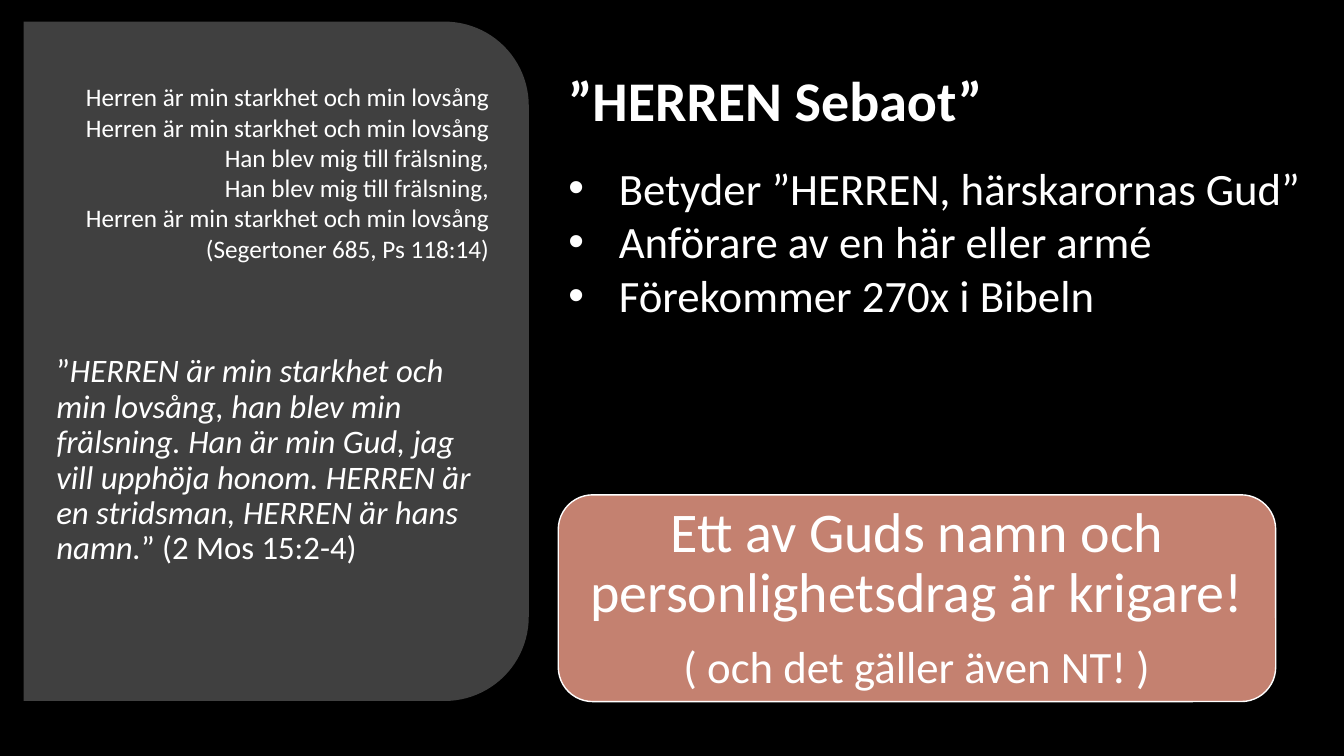
from lxml.etree import SubElement
from pptx import Presentation
from pptx.dml.color import RGBColor
from pptx.enum.shapes import MSO_SHAPE
from pptx.enum.text import MSO_ANCHOR, MSO_AUTO_SIZE, PP_ALIGN
from pptx.oxml.ns import qn
from pptx.util import Cm, Pt


def color(value):
    return RGBColor.from_string(value)


def add_text(paragraph, text, size, bold=False, italic=False):
    run = paragraph.add_run()
    run.text = text
    run.font.name = "Calibri"
    run.font.size = Pt(size)
    run.font.bold = bold
    run.font.italic = italic
    run.font.color.rgb = color("FFFFFF")


presentation = Presentation()
presentation.slide_width = Cm(33.87)
presentation.slide_height = Cm(19.05)
slide = presentation.slides.add_slide(presentation.slide_layouts[1])
slide.background.fill.solid()
slide.background.fill.fore_color.rgb = color("000000")
shapes = slide.shapes

panel = shapes.add_shape(MSO_SHAPE.ROUND_2_SAME_RECTANGLE, Cm(-1.6), Cm(2.74), Cm(17.12), Cm(12.73))
panel.rotation = 90
panel.shadow.inherit = False
panel.fill.solid()
panel.fill.fore_color.rgb = color("404040")
panel.line.fill.background()
title = shapes.title
title.element.addprevious(panel.element)

song_lines = [
    "Herren är min starkhet och min lovsång",
    "Herren är min starkhet och min lovsång",
    "Han blev mig till frälsning,",
    "Han blev mig till frälsning,",
    "Herren är min starkhet och min lovsång",
    "(Segertoner 685, Ps 118:14)",
]
title.left, title.top, title.width, title.height = Cm(0.97), Cm(2.16), Cm(11.61), Cm(5.13)
title.text_frame.auto_size = MSO_AUTO_SIZE.NONE
title.text_frame.vertical_anchor = MSO_ANCHOR.MIDDLE
title.text_frame.margin_bottom = Cm(0.89)
paragraph = title.text_frame.paragraphs[0]
paragraph.alignment = PP_ALIGN.RIGHT
for index, line in enumerate(song_lines):
    if index:
        paragraph.add_line_break()
    add_text(paragraph, line, 18)

quote = shapes.add_textbox(Cm(1.17), Cm(6.86), Cm(11.61), Cm(9.5))
quote.text_frame.word_wrap = True
quote.text_frame.vertical_anchor = MSO_ANCHOR.MIDDLE
paragraph = quote.text_frame.paragraphs[0]
paragraph.line_spacing = 0.9
add_text(paragraph, "”", 23.4)
add_text(
    paragraph,
    "HERREN är min starkhet och min lovsång, han blev min frälsning. Han är min Gud, "
    "jag vill upphöja honom. HERREN är en stridsman, HERREN är hans namn.",
    23.4,
    italic=True,
)
add_text(paragraph, "” (2 Mos 15:2-4)", 23.4)

facts = slide.placeholders[1]
facts.left, facts.top, facts.width, facts.height = Cm(14.07), Cm(3.91), Cm(19.08), Cm(7.09)
facts.text_frame.auto_size = MSO_AUTO_SIZE.NONE
facts.text_frame.vertical_anchor = MSO_ANCHOR.TOP
fact_lines = ["Betyder ”HERREN, härskarornas Gud”", "Anförare av en här eller armé", "Förekommer 270x i Bibeln"]
for index, line in enumerate(fact_lines):
    paragraph = facts.text_frame.add_paragraph() if index else facts.text_frame.paragraphs[0]
    paragraph.space_before = Pt(0)
    add_text(paragraph, line, 32)
    properties = paragraph._p.get_or_add_pPr()
    properties.set("marL", str(Cm(1.27)))
    properties.set("indent", str(-Cm(1.27)))
    SubElement(properties, qn("a:buFont"), typeface="Arial")
    SubElement(properties, qn("a:buChar"), char="•")

callout = shapes.add_shape(MSO_SHAPE.ROUNDED_RECTANGLE, Cm(14.07), Cm(12.47), Cm(18.08), Cm(5.21))
callout.shadow.inherit = False
callout.fill.solid()
callout.fill.fore_color.rgb = color("C48170")
callout.line.color.rgb = color("FFFFFF")
callout.line.width = Pt(1)
frame = callout.text_frame
frame.word_wrap = True
frame.vertical_anchor = MSO_ANCHOR.MIDDLE
frame.margin_left = frame.margin_top = frame.margin_right = frame.margin_bottom = Cm(0.53)
statement = frame.paragraphs[0]
statement.space_after = Pt(14)
remark = frame.add_paragraph()
for paragraph, text, size in [
    (statement, "Ett av Guds namn och personlighetsdrag är krigare!", 40),
    (remark, "( och det gäller även NT! )", 32),
]:
    paragraph.alignment = PP_ALIGN.CENTER
    paragraph.line_spacing = 0.9
    add_text(paragraph, text, size)

heading = shapes.add_textbox(Cm(14.07), Cm(1.73), Cm(19.08), Cm(4.11))
heading.text_frame.word_wrap = True
paragraph = heading.text_frame.paragraphs[0]
paragraph.line_spacing = 0.9
add_text(paragraph, "”HERREN Sebaot”", 40, bold=True)

presentation.save("out.pptx")
